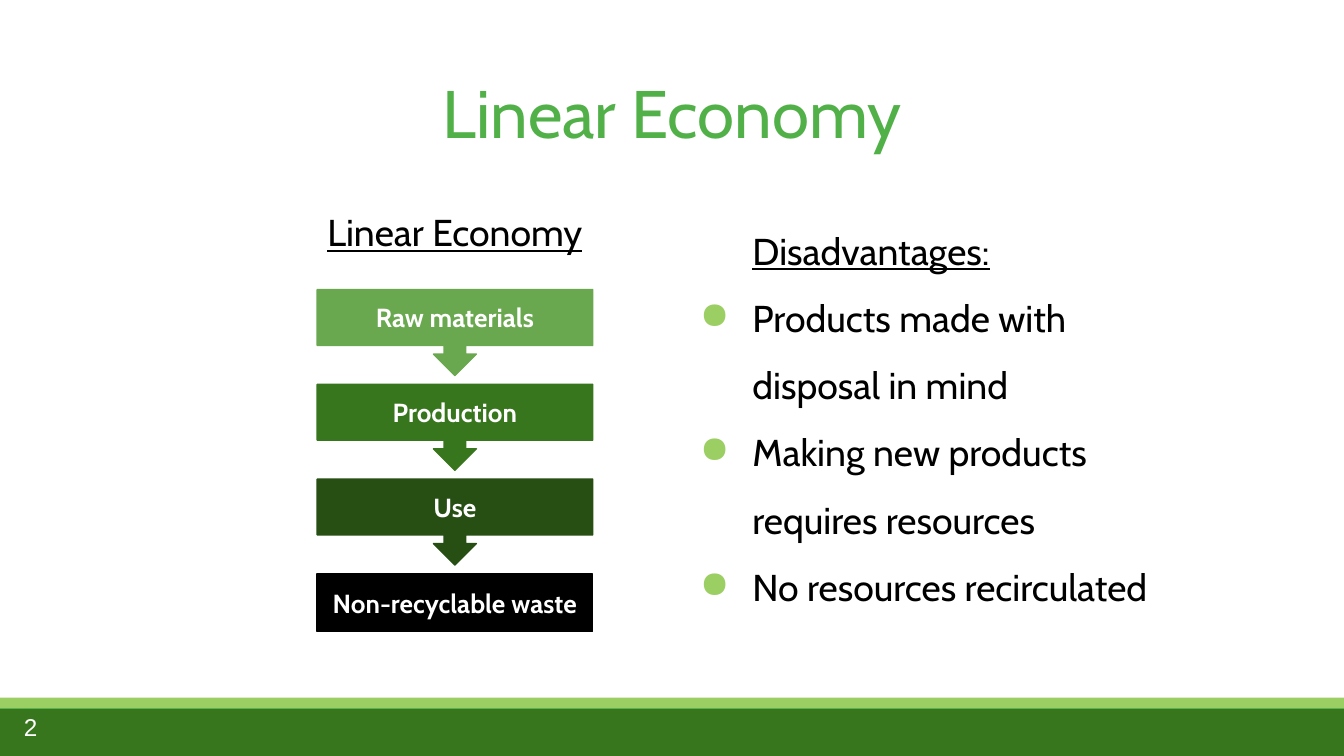
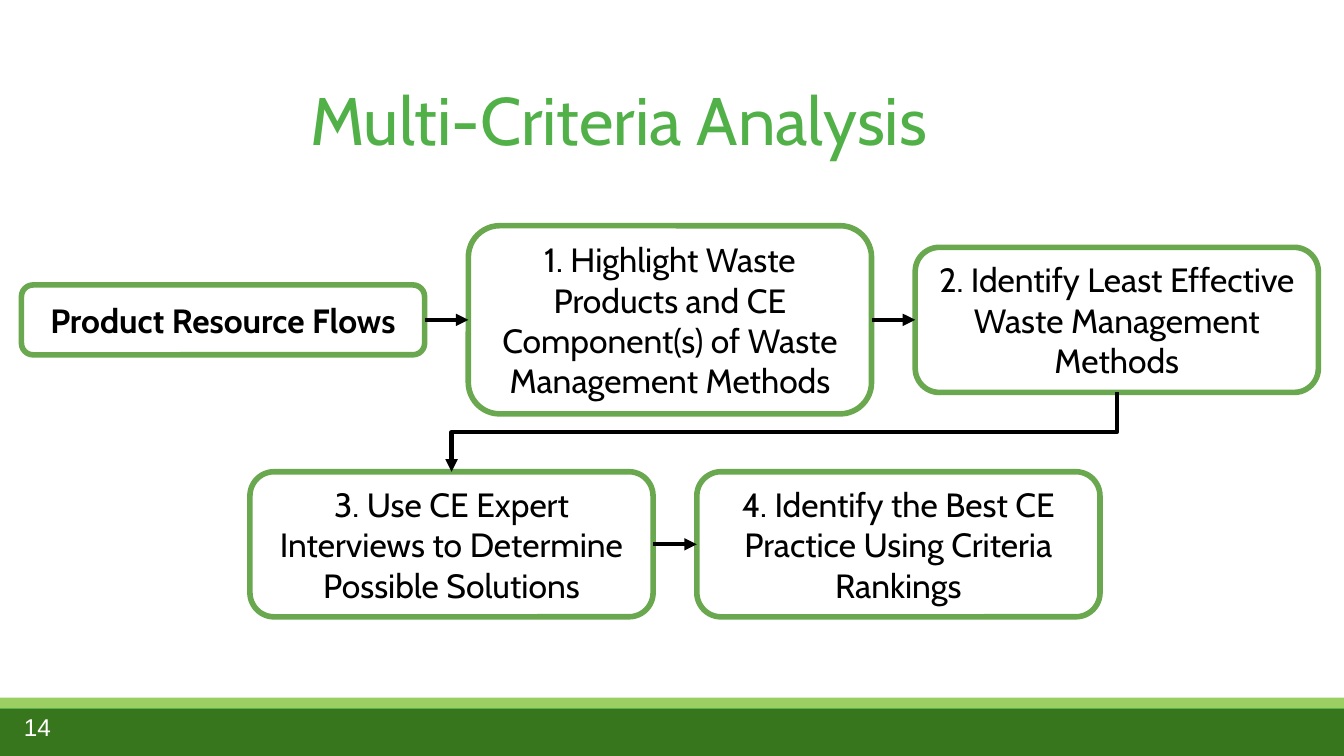
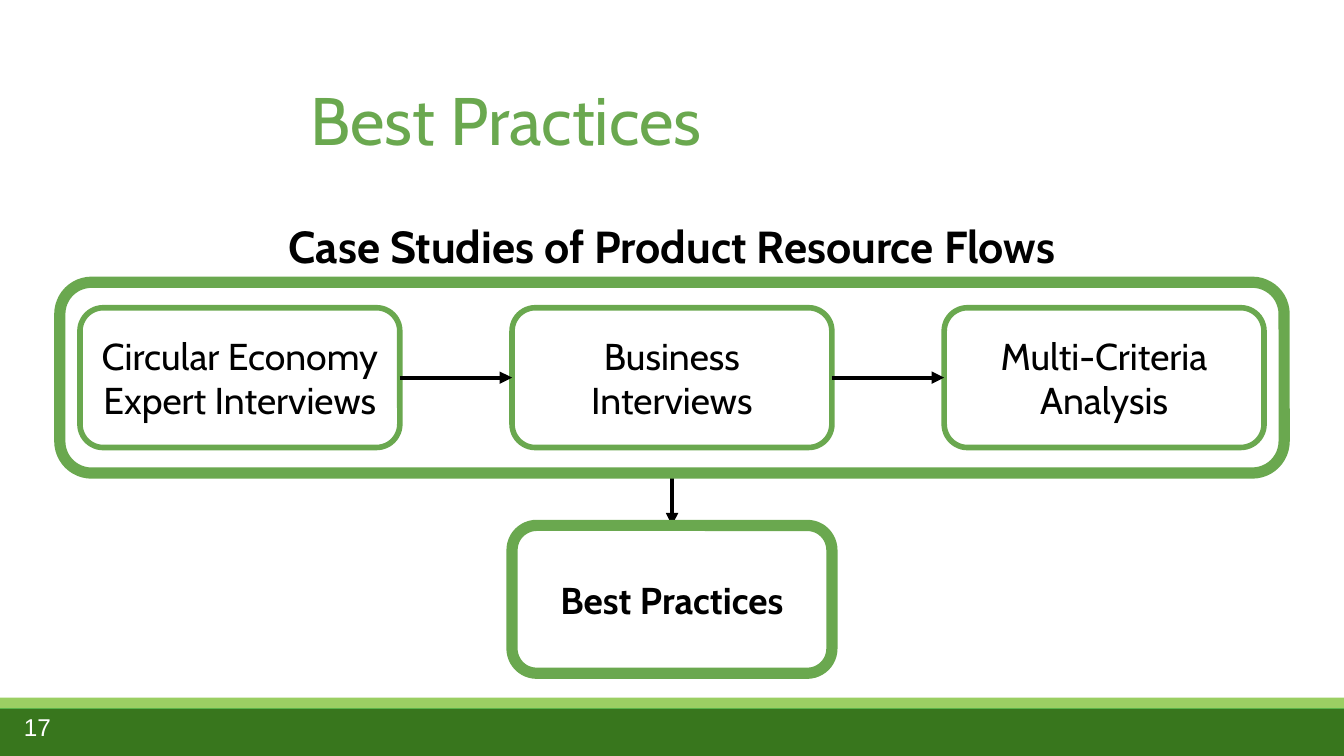
"""Three slides on the linear economy, multi-criteria analysis and best practices."""
from dataclasses import dataclass
from pptx import Presentation
from pptx.dml.color import RGBColor
from pptx.enum.shapes import MSO_CONNECTOR as CON, MSO_SHAPE as KIND
from pptx.enum.text import MSO_ANCHOR as ANCHOR, PP_ALIGN as ALIGN
from pptx.oxml import parse_xml
from pptx.oxml.ns import nsdecls
from pptx.util import Inches, Pt


@dataclass(frozen=True)
class Theme:
    font: str = "Cabin"
    plain: str = "Arial"
    green: str = "6AA84F"
    bright: str = "51B148"
    lime: str = "9BCF63"
    deep: str = "38761D"
    dark: str = "274E13"
    black: str = "000000"
    white: str = "FFFFFF"
    title: int = 36
    head: int = 24
    body: int = 20
    step: int = 18
    label: int = 14
    page: int = 13


T = Theme()
TOP, LEFT, BASE, RIGHT = range(4)
deck = Presentation()
deck.slide_width, deck.slide_height = Inches(10), Inches(5.625)
UNIT = deck.slide_width / 100


def put(slide, text, area, kind=None, fill=None, line=None, weight=0.75,
        size=T.body, color=T.black, font=T.font, bold=False, under=False,
        align=ALIGN.CENTER, anchor=ANCHOR.MIDDLE, before=None, space=None):
    spot = [round(n * UNIT) for n in area]
    if kind is None:
        shape = slide.shapes.add_textbox(*spot)
    else:
        shape = slide.shapes.add_shape(kind, *spot)
        shape.shadow.inherit = False
        shape.fill.solid()
        shape.fill.fore_color.rgb = RGBColor.from_string(fill)
        if line:
            shape.line.color.rgb = RGBColor.from_string(line)
            shape.line.width = Pt(weight)
        else:
            shape.line.fill.background()
    frame = shape.text_frame
    frame.word_wrap = True
    frame.vertical_anchor = anchor
    frame.margin_left = frame.margin_right = round(UNIT)
    frame.margin_top = frame.margin_bottom = round(UNIT)
    if text:
        frame.text = text
        for para in frame.paragraphs:
            para.alignment = align
            para.line_spacing = space
            para.space_before = before
            face = para.runs[0].font
            face.name, face.size = font, Pt(size)
            face.bold, face.underline = bold, under
            face.color.rgb = RGBColor.from_string(color)
    return shape


def link(slide, start, out, end, into, kind=CON.STRAIGHT):
    wire = slide.shapes.add_connector(kind, 0, 0, 0, 0)
    wire.begin_connect(start, out)
    wire.end_connect(end, into)
    wire.line.color.rgb = RGBColor.from_string(T.black)
    wire.line.width = Pt(2.25)
    wire.line._get_or_add_ln().append(
        parse_xml(f'<a:tailEnd {nsdecls("a")} type="triangle"/>'))
    wire.element.spPr.append(parse_xml(f'<a:effectLst {nsdecls("a")}/>'))
    return wire


pages = []
for num, title, color, area, align in (
        ("2", "Linear Economy", T.bright, (27.4, 4.3, 45.2, 7.7), ALIGN.CENTER),
        ("14", "Multi-Criteria Analysis", T.bright, (22.1, 4.8, 72.9, 12.4), ALIGN.LEFT),
        ("17", "Best Practices", T.green, (22.1, 4.8, 72.9, 12.4), ALIGN.LEFT)):
    slide = deck.slides.add_slide(deck.slide_layouts[6])
    put(slide, "", (-1.3, 52.7, 102, 5.3), KIND.RECTANGLE, T.deep, T.bright)
    put(slide, "", (-1.3, 51.9, 102, 0.8), KIND.RECTANGLE, T.lime)
    put(slide, title, area, size=T.title, color=color, align=align, anchor=ANCHOR.TOP)
    put(slide, num, (0.8, 51.9, 6, 4.3), size=T.page, color=T.white,
        font=T.plain, align=ALIGN.LEFT)
    pages.append(slide)
chain, flow, best = pages

put(chain, "Linear Economy", (22.2, 14.6, 23.3, 5.7), under=True,
    anchor=ANCHOR.TOP, before=Pt(6))
stages = (("Raw materials", T.green), ("Production", T.deep),
          ("Use", T.dark), ("Non-recyclable waste", T.black))
for row, (text, color) in enumerate(stages):
    last = row == len(stages) - 1
    box = put(chain, text, (23.6, 21.55 + 7.05 * row, 20.5, 4.3 if last else 6.4),
              KIND.RECTANGLE if last else KIND.DOWN_ARROW_CALLOUT,
              color, color, size=T.label, color=T.white, bold=True)
    if not last:
        for spot, part in enumerate((0.25, 0.25, 0.25, 0.65)):
            box.adjustments[spot] = part

notes = put(chain, "Disadvantages:\nProducts made with disposal in mind\n"
            "Making new products requires resources\nNo resources recirculated",
            (50, 14.3, 38.2, 31.2), align=ALIGN.LEFT, anchor=ANCHOR.TOP, space=1.5)
for row, para in enumerate(notes.text_frame.paragraphs):
    props = para._p.get_or_add_pPr()
    props.set("marL", str(Inches(0.5)))
    if row == 0:
        para.runs[0].font.underline = True
        continue
    props.set("indent", str(-Inches(0.39)))
    for mark in (f'<a:buClr {nsdecls("a")}><a:srgbClr val="{T.lime}"/></a:buClr>',
                 f'<a:buChar {nsdecls("a")} char="●"/>'):
        props.append(parse_xml(mark))

steps = []
for text, left, mid, high in (
        ("Product Resource Flows", 1.6, 23.8, 5.2),
        ("1. Highlight Waste Products and CE Component(s) of Waste Management Methods",
         34.85, 23.8, 14),
        ("2. Identify Least Effective Waste Management Methods", 68.1, 23.8, 10.8),
        ("3. Use CE Expert Interviews to Determine Possible Solutions", 18.6, 40.5, 10.8),
        ("4. Identify the Best CE Practice Using Criteria Rankings", 51.85, 40.5, 10.8)):
    steps.append(put(flow, text, (left, mid - high / 2, 30, high), KIND.ROUNDED_RECTANGLE,
                     T.white, T.green, 3, size=T.step, bold=not steps))
for start, end in ((0, 1), (1, 2), (3, 4)):
    link(flow, steps[start], RIGHT, steps[end], LEFT)

turn = link(flow, steps[2], BASE, steps[3], TOP, CON.ELBOW)
wide, high = turn.width, turn.height
turn.left += (wide - high) // 2
turn.top += (high - wide) // 2
turn.width, turn.height = high, wide
frame = turn.element.spPr.get_or_add_xfrm()
frame.flipH, frame.rot = False, 90

goal = put(best, "Best Practices", (38.1, 39.1, 23.8, 11), KIND.ROUNDED_RECTANGLE,
           T.white, T.green, 6, bold=True)
group = put(best, "", (4.45, 21, 91.1, 14.2), KIND.ROUNDED_RECTANGLE, T.white, T.green, 6)
drop = link(best, group, BASE, goal, TOP)
goal.element.addprevious(drop.element)
put(best, "Case Studies of Product Resource Flows", (19.7, 15.3, 60.6, 2.8),
    size=T.head, bold=True, anchor=ANCHOR.TOP)
cards = [put(best, text, (5.95 + 32.15 * col, 22.9, 23.8, 10.4),
             KIND.ROUNDED_RECTANGLE, T.white, T.green, 3)
         for col, text in enumerate(("Circular Economy Expert Interviews",
                                     "Business Interviews", "Multi-Criteria Analysis"))]
for start, end in zip(cards, cards[1:]):
    link(best, start, RIGHT, end, LEFT)

deck.save("out.pptx")
